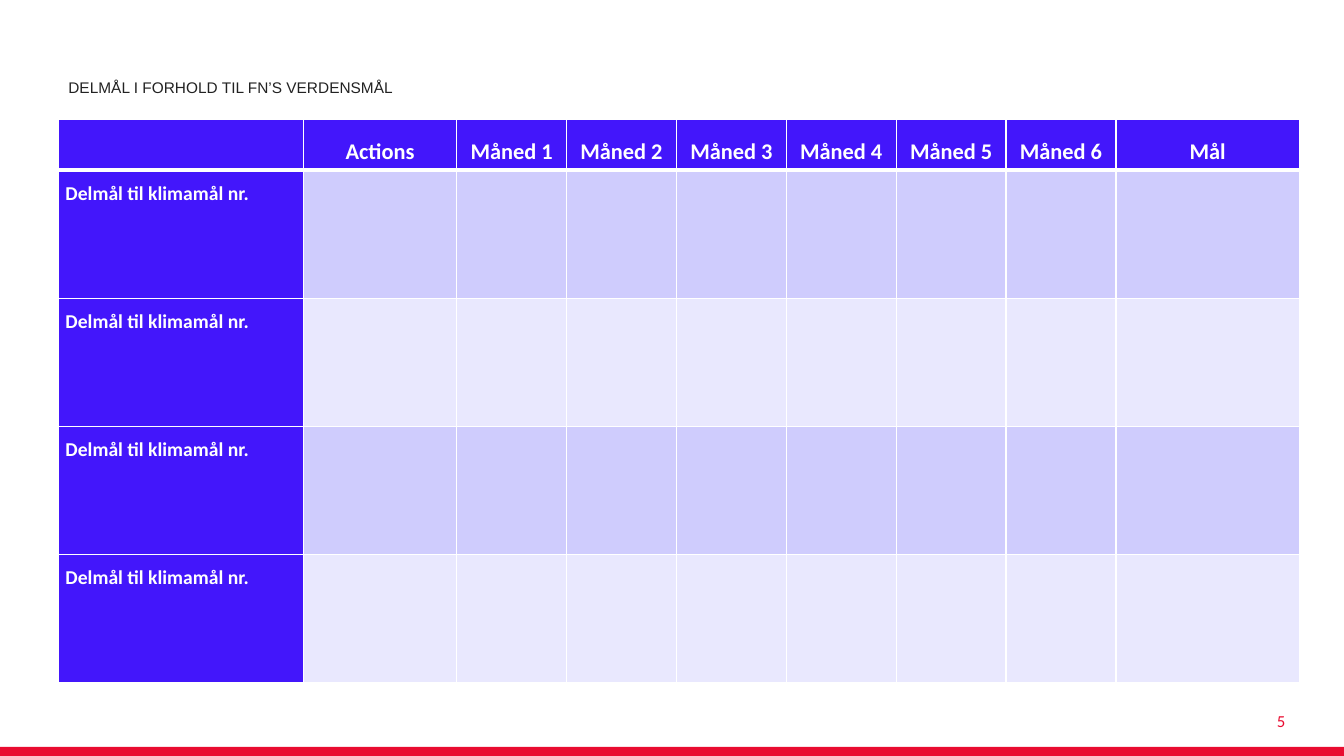
import pptx
import pptx.dml.color
import pptx.enum.shapes
import pptx.enum.text
import pptx.oxml
import pptx.oxml.ns
import pptx.util
from pptx.util import Inches

RGBColor = pptx.dml.color.RGBColor
PP_ALIGN = pptx.enum.text.PP_ALIGN
MSO_ANCHOR = pptx.enum.text.MSO_ANCHOR

WHITE = RGBColor(0xFF, 0xFF, 0xFF)
RED = RGBColor(0xE9, 0x0C, 0x30)
INK = RGBColor(0x22, 0x22, 0x22)
VIOLET = RGBColor(0x43, 0x16, 0xFB)
BANDS = (RGBColor(0xCF, 0xCC, 0xFD), RGBColor(0xE9, 0xE8, 0xFE))

COLUMN_WIDTHS = [2.43, 1.52] + [1.09] * 6 + [1.82]
ROW_HEIGHTS = [0.51] + [1.27] * 4
HEADINGS = ["", "Actions"] + [f"Måned {month}" for month in range(1, 7)] + ["Mål"]
GOAL_LABEL = "Delmål til klimamål nr."


class SlideBuilder:
    """Hold the text styles and the slide, and draw each kind of element."""

    styles = {
        "caption": {"size": 11, "name": "Arial", "bold": False, "color": INK},
        "number": {"size": 12, "name": "Calibri", "bold": False, "color": RED},
        "heading": {"size": 16, "name": "Calibri", "bold": True, "color": WHITE},
        "goal": {"size": 14, "name": "Calibri", "bold": True, "color": WHITE},
    }

    def __init__(self, slide):
        self.slide = slide

    def fill_frame(self, frame, text, style, **paragraph_format):
        paragraph = frame.paragraphs[0]
        paragraph.text = text
        for name, value in paragraph_format.items():
            setattr(paragraph, name, value)
        values = dict(self.styles[style])
        paragraph.font.color.rgb = values.pop("color")
        values["size"] = pptx.util.Pt(values["size"])
        for name, value in values.items():
            setattr(paragraph.font, name, value)

    def bar(self, left, top, width, height, color):
        shape = self.slide.shapes.add_shape(
            pptx.enum.shapes.MSO_SHAPE.RECTANGLE,
            Inches(left), Inches(top), Inches(width), Inches(height))
        shape.shadow.inherit = False
        shape.fill.solid()
        shape.fill.fore_color.rgb = color
        shape.line.fill.background()

    def text(self, left, top, width, height, text, style, frame_format, **paragraph_format):
        box = self.slide.shapes.add_textbox(
            Inches(left), Inches(top), Inches(width), Inches(height))
        for name, value in {"word_wrap": True, **frame_format}.items():
            setattr(box.text_frame, name, value)
        self.fill_frame(box.text_frame, text, style, **paragraph_format)

    def border(self, cell, side, width):
        properties = cell._tc.get_or_add_tcPr()
        properties.append(pptx.oxml.parse_xml(
            f'<a:ln{side} {pptx.oxml.ns.nsdecls("a")} w="{pptx.util.Pt(width)}">'
            f'<a:solidFill><a:srgbClr val="{WHITE}"/></a:solidFill></a:ln{side}>'))

    def cell(self, cell, row, column):
        header = row == 0
        widths = {"L": 1, "R": 1, "T": 3 if row == 1 else 1, "B": 3 if header else 1}
        for side, width in widths.items():
            self.border(cell, side, width)
        cell.fill.solid()
        cell.fill.fore_color.rgb = VIOLET if header or column == 0 else BANDS[(row - 1) % 2]
        text = HEADINGS[column] if header else GOAL_LABEL if column == 0 else ""
        if not text:
            return
        cell_format = {
            "margin_left": Inches(0.07), "margin_right": Inches(0.07),
            "margin_top": 0, "margin_bottom": 0,
            "vertical_anchor": MSO_ANCHOR.MIDDLE if header else MSO_ANCHOR.TOP,
        }
        for name, value in cell_format.items():
            setattr(cell, name, value)
        self.fill_frame(cell.text_frame, text, "heading" if header else "goal", line_spacing=1.5,
                        alignment=PP_ALIGN.CENTER if header else PP_ALIGN.LEFT)

    def table(self, left, top):
        table = self.slide.shapes.add_table(
            len(ROW_HEIGHTS), len(COLUMN_WIDTHS), Inches(left), Inches(top),
            Inches(sum(COLUMN_WIDTHS)), Inches(sum(ROW_HEIGHTS))).table
        table.horz_banding = False
        for column, width in zip(table.columns, COLUMN_WIDTHS):
            column.width = Inches(width)
        for row_index, (row, height) in enumerate(zip(table.rows, ROW_HEIGHTS)):
            row.height = Inches(height)
            for column_index, cell in enumerate(row.cells):
                self.cell(cell, row_index, column_index)


def main():
    presentation = pptx.Presentation()
    presentation.slide_width = Inches(13.33)
    presentation.slide_height = Inches(7.5)
    builder = SlideBuilder(presentation.slides.add_slide(presentation.slide_layouts[6]))
    builder.bar(0, 7.41, 13.33, 0.1, RED)
    builder.text(9.75, 6.95, 3, 0.4, "5", "number",
                 {"margin_right": 0, "vertical_anchor": MSO_ANCHOR.MIDDLE},
                 alignment=PP_ALIGN.RIGHT)
    builder.table(0.58, 1.18)
    builder.text(0.58, 0.71, 7.6, 0.3, "DELMÅL I FORHOLD TIL FN’S VERDENSMÅL", "caption",
                 {"vertical_anchor": MSO_ANCHOR.BOTTOM}, line_spacing=0.9)
    presentation.save("out.pptx")


if __name__ == "__main__":
    main()
